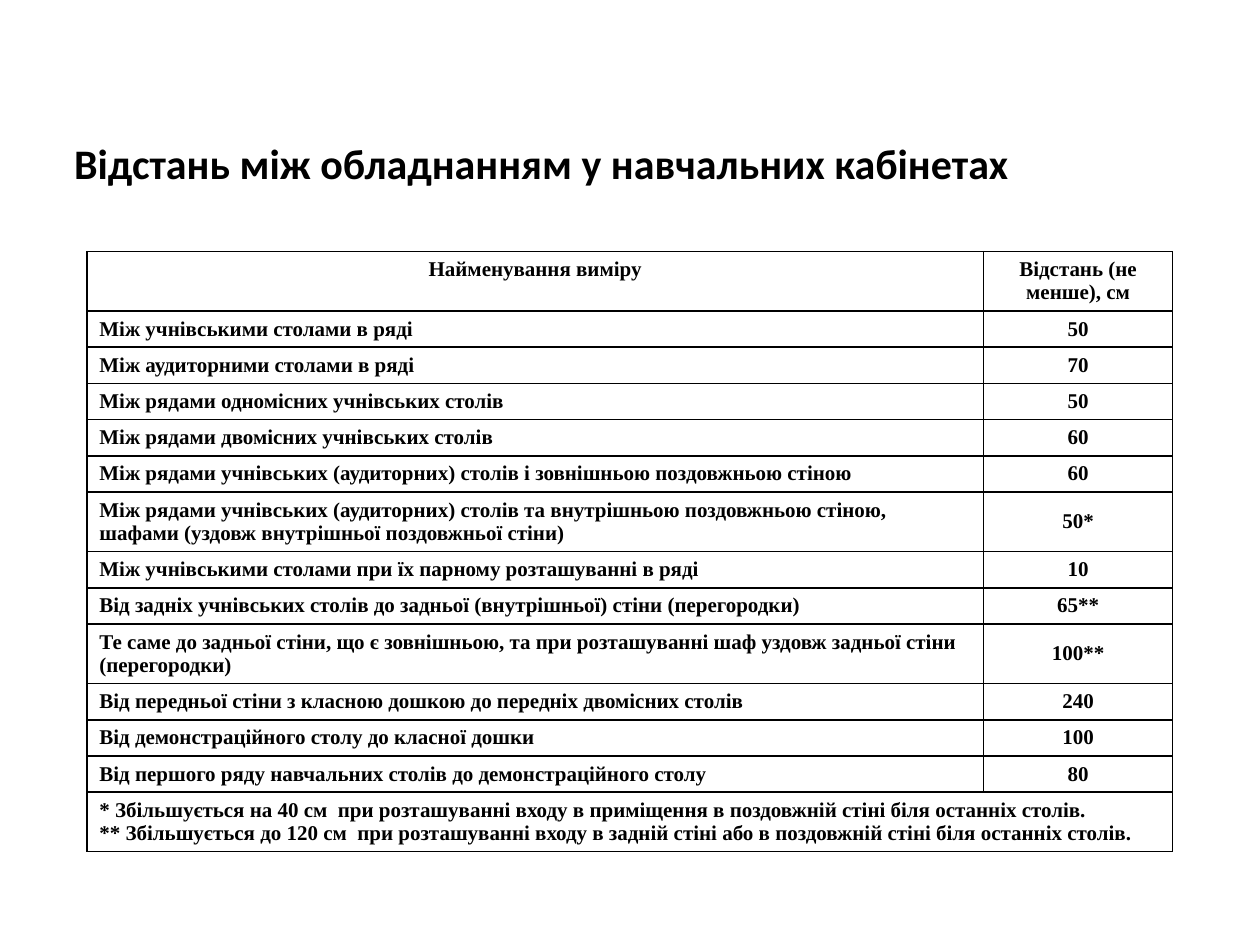
import pptx
import pptx.util
import pptx.dml.color
import pptx.enum.text
import pptx.oxml
import pptx.oxml.ns

Cm, Pt = pptx.util.Cm, pptx.util.Pt
RGB = pptx.dml.color.RGBColor.from_string
ALIGN, ANCHOR = pptx.enum.text.PP_ALIGN, pptx.enum.text.MSO_ANCHOR

TITLE = "Відстань між обладнанням у навчальних кабінетах"
HEADER = ("Найменування виміру", "Відстань (не менше), см")
DISTANCES = [
    ("Між учнівськими столами в ряді", "50"),
    ("Між аудиторними столами в ряді", "70"),
    ("Між рядами одномісних учнівських столів", "50"),
    ("Між рядами двомісних учнівських столів", "60"),
    ("Між рядами учнівських (аудиторних) столів і зовнішньою поздовжньою стіною", "60"),
    ("Між рядами учнівських (аудиторних) столів та внутрішньою поздовжньою стіною, "
     "шафами (уздовж внутрішньої поздовжньої стіни)", "50*"),
    ("Між учнівськими столами при їх парному розташуванні в ряді", "10"),
    ("Від задніх учнівських столів до задньої (внутрішньої) стіни (перегородки)", "65**"),
    ("Те саме до задньої стіни, що є зовнішньою, та при розташуванні шаф уздовж "
     "задньої стіни (перегородки)", "100**"),
    ("Від передньої стіни з класною дошкою до передніх двомісних столів", "240"),
    ("Від демонстраційного столу до класної дошки", "100"),
    ("Від першого ряду навчальних столів до демонстраційного столу", "80"),
]
NOTES = (
    "* Збільшується на 40 см  при розташуванні входу в приміщення в поздовжній стіні "
    "біля останніх столів.\n"
    "** Збільшується до 120 см  при розташуванні входу в задній стіні або в поздовжній стіні "
    "біля останніх столів."
)
ROWS = [HEADER, *DISTANCES, (NOTES, "")]
WRAPPED = {6, 9}
TALL = {0, len(ROWS) - 1} | WRAPPED
COLORS = {"text": "000000", "fill": "FFFFFF", "border": "000000"}
TITLE_FONT = {"name": "Calibri", "size": Pt(24), "bold": True}
CELL_FONT = {"name": "Times New Roman", "size": Pt(12), "bold": True}
COLUMNS = (Cm(18.08), Cm(3.81))
SINGLE, DOUBLE = Cm(0.73), Cm(1.2)


def apply(obj, values):
    for name, value in values.items():
        setattr(obj, name, value)


def set_font(font, values):
    apply(font, values)
    font.color.rgb = RGB(COLORS["text"])


def set_borders(cell):
    tcPr = cell._tc.get_or_add_tcPr()
    for i, side in enumerate(("lnL", "lnR", "lnT", "lnB")):
        tcPr.insert(i, pptx.oxml.parse_xml(
            f'<a:{side} {pptx.oxml.ns.nsdecls("a")} w="{Pt(1)}"><a:solidFill>'
            f'<a:srgbClr val="{COLORS["border"]}"/></a:solidFill></a:{side}>'))


def fill_cell(cell, text, centred, anchor):
    cell.text = text
    cell.vertical_anchor = anchor
    cell.fill.solid()
    cell.fill.fore_color.rgb = RGB(COLORS["fill"])
    set_borders(cell)
    for p in cell.text_frame.paragraphs:
        p.alignment = ALIGN.CENTER if centred else ALIGN.LEFT
        apply(p._p.get_or_add_pPr(), {"marL": Cm(0.64), "indent": Cm(-0.64)})
        for r in p.runs:
            set_font(r.font, CELL_FONT)


def add_title(s):
    title = s.shapes.title
    apply(title, {"left": Cm(1.24), "top": Cm(1.73), "width": Cm(23.42), "height": Cm(2.84)})
    tf = title.text_frame
    tf.text = TITLE
    apply(tf, {"vertical_anchor": ANCHOR.MIDDLE, "margin_top": Cm(0.61), "word_wrap": True})
    p = tf.paragraphs[0]
    apply(p, {"alignment": ALIGN.LEFT, "line_spacing": 0.75})
    set_font(p.runs[0].font, TITLE_FONT)


def add_distances(s):
    heights = [DOUBLE if i in TALL else SINGLE for i in range(len(ROWS))]
    table = s.shapes.add_table(len(ROWS), len(COLUMNS), Cm(1.75), Cm(5.07),
                               sum(COLUMNS), sum(heights)).table
    apply(table, {"first_row": False, "horz_banding": False})
    for column, width in zip(table.columns, COLUMNS):
        column.width = width
    for i, (row, height) in enumerate(zip(ROWS, heights)):
        table.rows[i].height = height
        anchor = ANCHOR.MIDDLE if i in WRAPPED else ANCHOR.TOP
        for j, text in enumerate(row):
            fill_cell(table.cell(i, j), text, i == 0 or j == 1, anchor)
    last = len(ROWS) - 1
    table.cell(last, 0).merge(table.cell(last, 1))


def main():
    prs = pptx.Presentation()
    apply(prs, {"slide_width": Cm(25.4), "slide_height": Cm(19.05)})
    s = prs.slides.add_slide(prs.slide_layouts[5])
    add_title(s)
    add_distances(s)
    prs.save("out.pptx")


if __name__ == "__main__":
    main()
